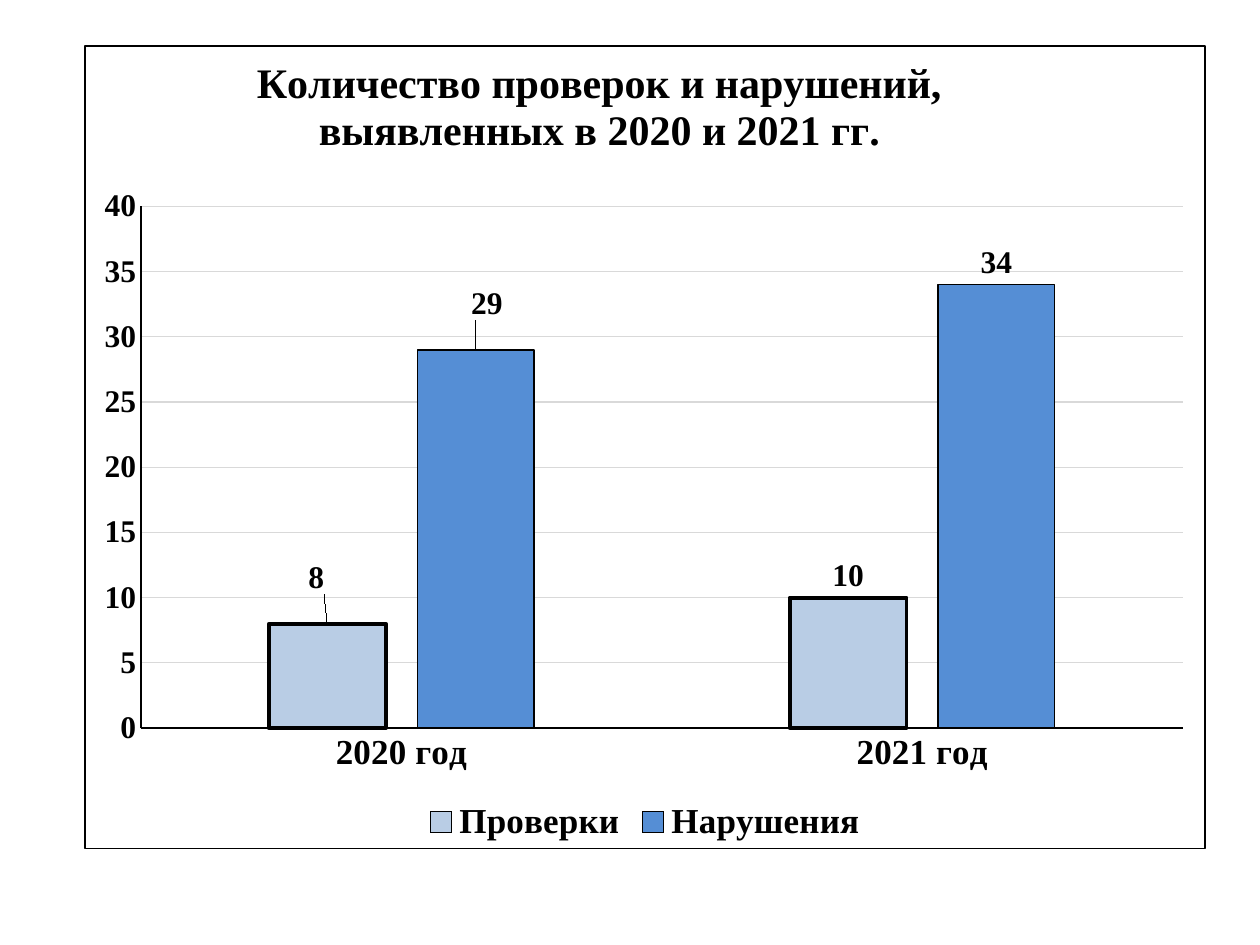
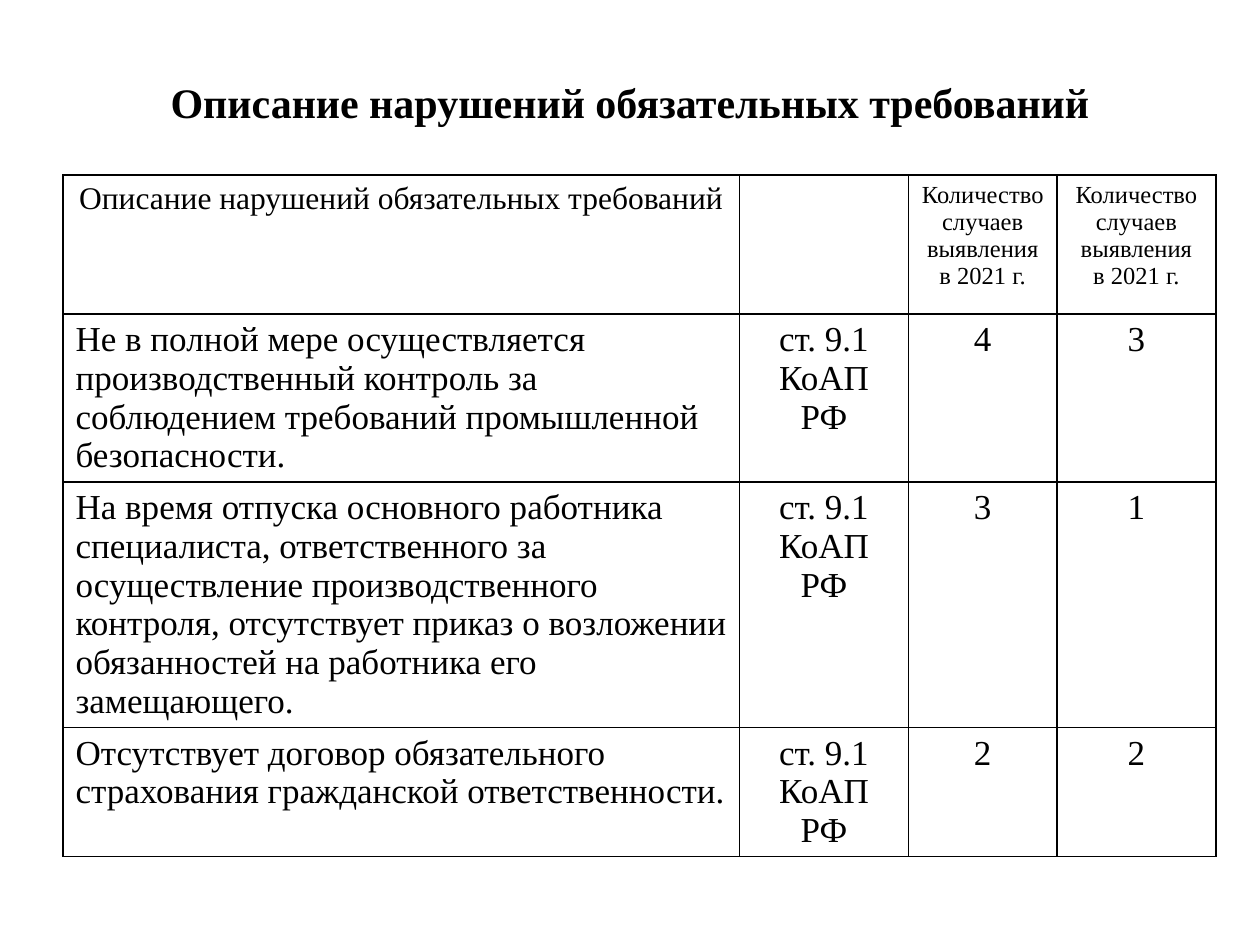
from lxml import etree
from pptx import Presentation
from pptx.chart.data import CategoryChartData
from pptx.dml.color import RGBColor
from pptx.enum import chart as ch, text
from pptx.oxml import ns, parse_xml
from pptx.util import Inches, Pt

FONT = "Times New Roman"
BLACK = RGBColor(0, 0, 0)
WHITE = RGBColor(255, 255, 255)
GREY = RGBColor(0xD9, 0xD9, 0xD9)
PALE = RGBColor(0xB9, 0xCD, 0xE5)
BLUE = RGBColor(0x55, 0x8E, 0xD5)

TITLE_ONLY, BLANK = 5, 6
CENTER, LEFT = text.PP_ALIGN.CENTER, text.PP_ALIGN.LEFT
ARTICLE = "ст. 9.1 КоАП РФ"


def style(font, size, bold=False):
    font.name, font.size, font.bold = FONT, Pt(size), bold
    font.color.rgb = BLACK


def stroke(line, color=BLACK, width=0.75):
    line.color.rgb = color
    line.width = Pt(width)


def place(node, index, **parts):
    """Give a chart element a manual layout as its child at index."""
    for old in node.findall(ns.qn("c:layout")):
        node.remove(old)
    layout = etree.Element(ns.qn("c:layout"))
    manual = etree.SubElement(layout, ns.qn("c:manualLayout"))
    for key, val in parts.items():
        etree.SubElement(manual, ns.qn(f"c:{key}"), val=str(val))
    node.insert(index, layout)


class Deck:
    def __init__(self):
        self.prs = Presentation()
        self.prs.slide_width, self.prs.slide_height = Inches(10), Inches(7.5)
        self.slide = None

    def add(self, layout):
        self.slide = self.prs.slides.add_slide(self.prs.slide_layouts[layout])
        fill = self.slide.background.fill
        fill.solid()
        fill.fore_color.rgb = WHITE

    def put(self, para, words, size, bold=False, align=CENTER):
        """Add text to a paragraph, with a line break at each newline."""
        para.alignment = align
        for i, line in enumerate(words.split("\n")):
            if i:
                para.add_line_break()
            run = para.add_run()
            run.text = line
            style(run.font, size, bold)

    def title(self, words, box):
        shape = self.slide.shapes.title
        shape.left, shape.top, shape.width, shape.height = map(Inches, box)
        shape.text_frame.vertical_anchor = text.MSO_ANCHOR.MIDDLE
        self.put(shape.text_frame.paragraphs[0], words, 24, True)

    def chart(self, box, lines, cats, series):
        data = CategoryChartData()
        data.categories = cats
        for name, vals, *_ in series:
            data.add_series(name, vals)
        frame = self.slide.shapes.add_chart(
            ch.XL_CHART_TYPE.COLUMN_CLUSTERED, *map(Inches, box), data)
        chart = frame.chart
        style(chart.font, 18)
        self.frame(chart)
        self.head(chart, lines)
        self.axes(chart)
        chart.has_legend = True
        chart.legend.position = ch.XL_LEGEND_POSITION.BOTTOM
        chart.legend.include_in_layout = False
        style(chart.legend.font, 20, True)
        plot = chart.plots[0]
        plot.gap_width, plot.overlap, plot.vary_by_categories = 219, -27, False
        for item, (_, _, color, width, shift) in zip(plot.series, series):
            self.bars(item, color, width, shift)

    def frame(self, chart):
        """Set the chart's white ground, black border and plot area."""
        space = chart._chartSpace
        space.find(ns.qn("c:txPr")).addprevious(parse_xml(
            f'<c:spPr {ns.nsdecls("c", "a")}>'
            f'<a:solidFill><a:srgbClr val="{WHITE}"/></a:solidFill>'
            f'<a:ln w="{Pt(0.75)}"><a:solidFill><a:srgbClr val="{BLACK}"/>'
            '</a:solidFill></a:ln></c:spPr>'))
        area = space.find(".//" + ns.qn("c:plotArea"))
        place(area, 0, layoutTarget="inner", xMode="edge", yMode="edge",
              x=0.05, y=0.2, w=0.93, h=0.65)

    def head(self, chart, lines):
        chart.has_title = True
        frame = chart.chart_title.text_frame
        for i, line in enumerate(lines):
            para = frame.add_paragraph() if i else frame.paragraphs[0]
            self.put(para, line, 24, True)
        place(chart.chart_title._element, 1, xMode="edge", yMode="edge",
              x=0.15, y=0.01)

    def axes(self, chart):
        for axis, size in ((chart.category_axis, 20), (chart.value_axis, 18)):
            axis.major_tick_mark = axis.minor_tick_mark = ch.XL_TICK_MARK.NONE
            stroke(axis.format.line)
            style(axis.tick_labels.font, size, True)
        axis = chart.value_axis
        axis.minimum_scale, axis.maximum_scale, axis.major_unit = 0, 40, 5
        axis.has_major_gridlines = True
        stroke(axis.major_gridlines.format.line, GREY)

    def bars(self, item, color, width, shift):
        """Format a series and nudge the label of its first bar."""
        item.format.fill.solid()
        item.format.fill.fore_color.rgb = color
        stroke(item.format.line, BLACK, width)
        labels = item.data_labels
        labels.show_value = True
        first = item.points[0].data_label
        for label in (labels, first):
            label.position = ch.XL_LABEL_POSITION.OUTSIDE_END
            style(label.font, 18, True)
        node = labels._element.find(ns.qn("c:dLbl"))
        place(node, 1, x=shift[0], y=shift[1])

    def table(self, left, top, cols, heights, rows):
        table = self.slide.shapes.add_table(
            len(rows), len(cols), Inches(left), Inches(top),
            Inches(sum(cols)), Inches(sum(heights))).table
        table.first_row = table.horz_banding = False
        for col, width in zip(table.columns, cols):
            col.width = Inches(width)
        for row, height in zip(table.rows, heights):
            row.height = Inches(height)
        for r, row in enumerate(rows):
            for c, words in enumerate(row):
                cell = table.cell(r, c)
                self.edge(cell)
                cell.fill.background()
                if words:
                    size = 20 if r else 14 if c else 18
                    align = LEFT if r and not c else CENTER
                    self.put(cell.text_frame.paragraphs[0], words, size,
                             align=align)

    def edge(self, cell):
        props = cell._tc.get_or_add_tcPr()
        for side in "LRTB":
            props.append(parse_xml(
                f'<a:ln{side} {ns.nsdecls("a")} w="{Pt(1)}"><a:solidFill>'
                f'<a:srgbClr val="{BLACK}"/></a:solidFill></a:ln{side}>'))


def main():
    deck = Deck()

    deck.add(BLANK)
    deck.chart(
        (0.67, 0.36, 8.9, 6.38),
        ("Количество проверок и нарушений,", "выявленных в 2020 и 2021 гг."),
        ("2020 год", "2021 год"),
        (("Проверки", (8, 10), PALE, 2.25, (-0.01, -0.03)),
         ("Нарушения", (29, 34), BLUE, 0.75, (0.01, -0.03))))

    deck.add(TITLE_ONLY)
    deck.title("Описание нарушений обязательных требований",
               (0.5, 0.3, 9, 1.01))
    deck.table(0.5, 1.39, (5.37, 1.34, 1.18, 1.26), (1.1, 1.33, 1.95, 1.02), (
        ("Описание нарушений обязательных требований", "",
         "Количество случаев выявления в 2021 г.",
         "Количество случаев выявления\nв 2021 г."),
        ("Не в полной мере осуществляется производственный контроль за "
         "соблюдением требований промышленной безопасности.",
         ARTICLE, "4", "3"),
        ("На время отпуска основного работника специалиста, ответственного "
         "за осуществление производственного контроля, отсутствует приказ "
         "о возложении обязанностей на работника его замещающего.",
         ARTICLE, "3", "1"),
        ("Отсутствует договор обязательного страхования гражданской "
         "ответственности.", ARTICLE, "2", "2")))

    deck.prs.save("out.pptx")


if __name__ == "__main__":
    main()
